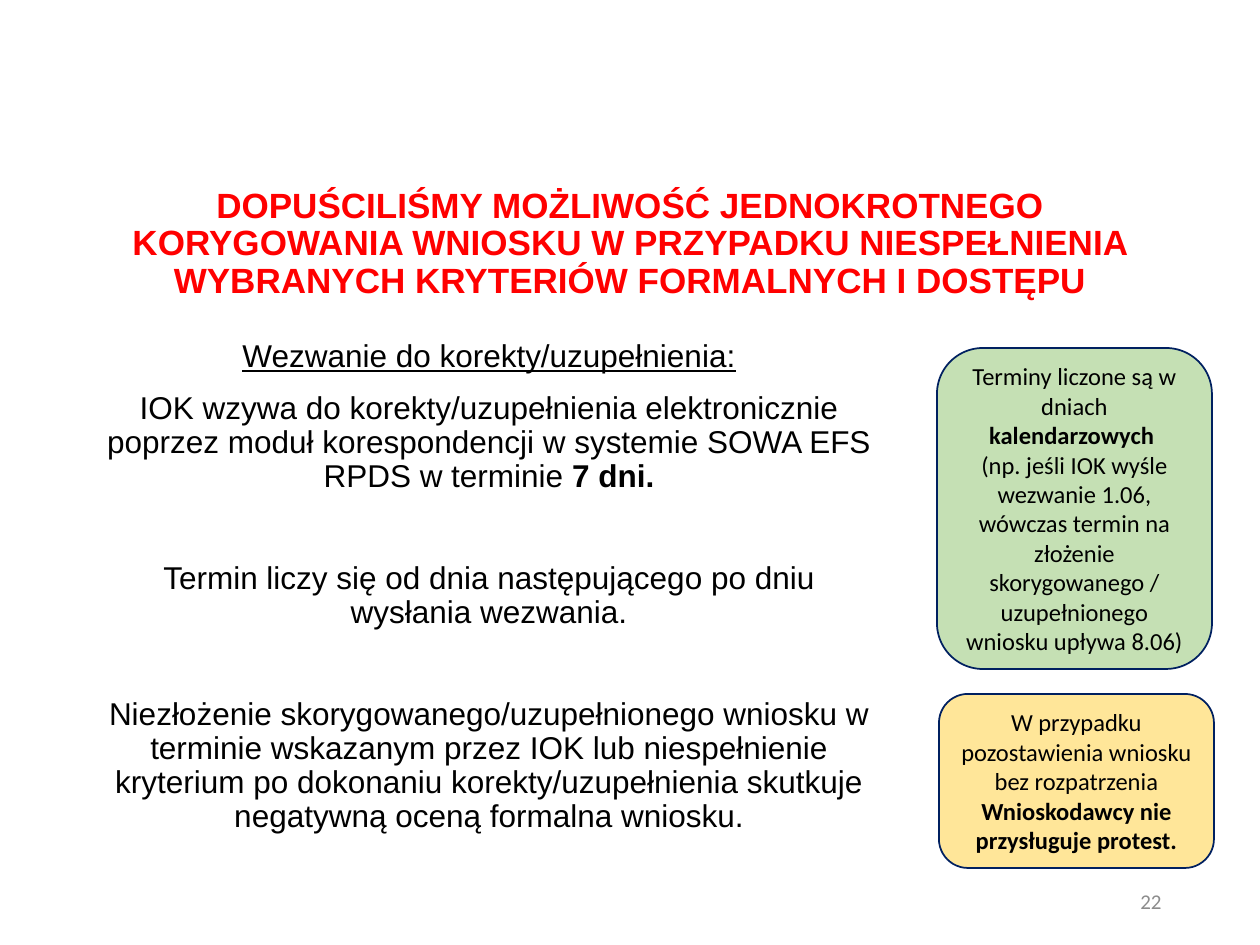
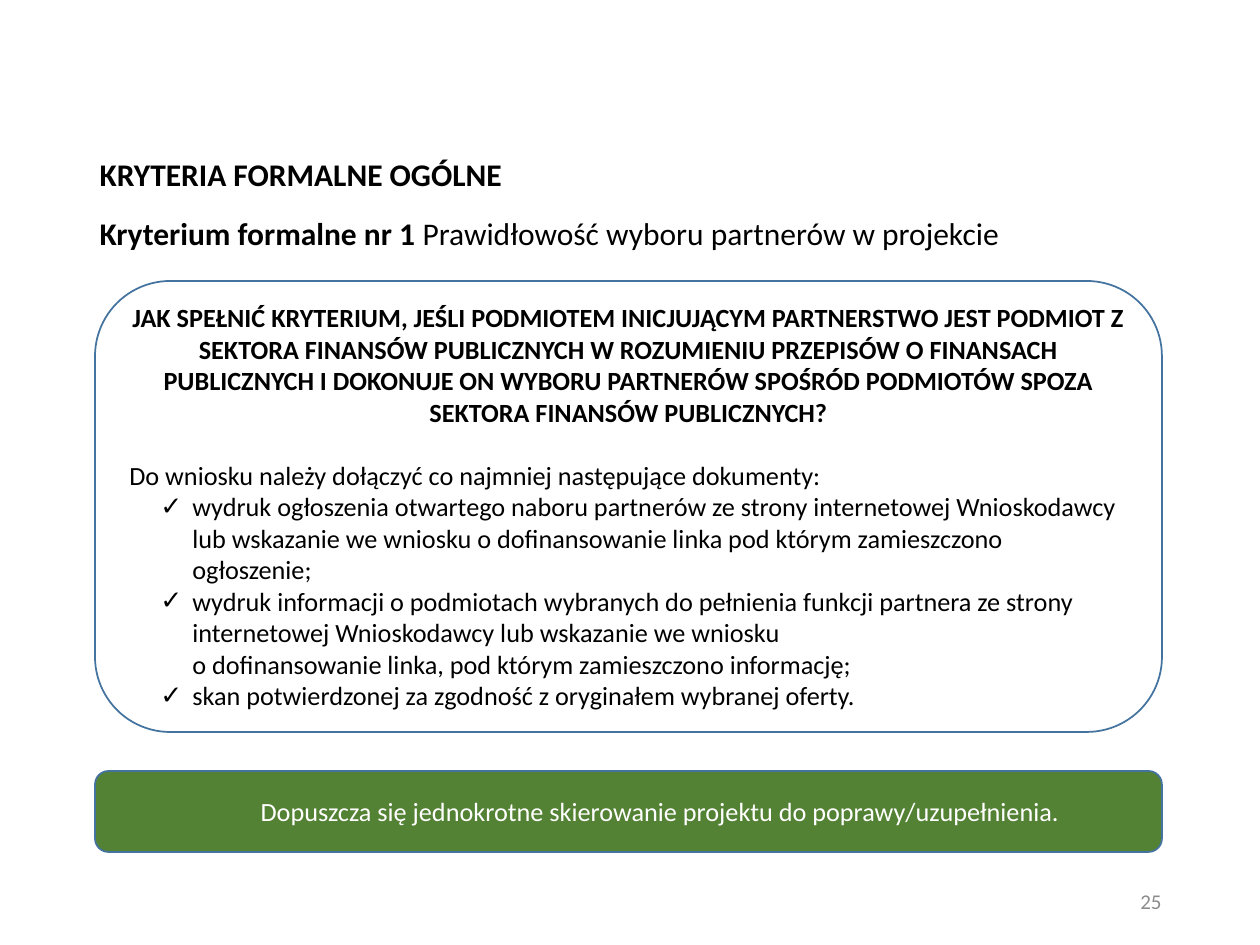
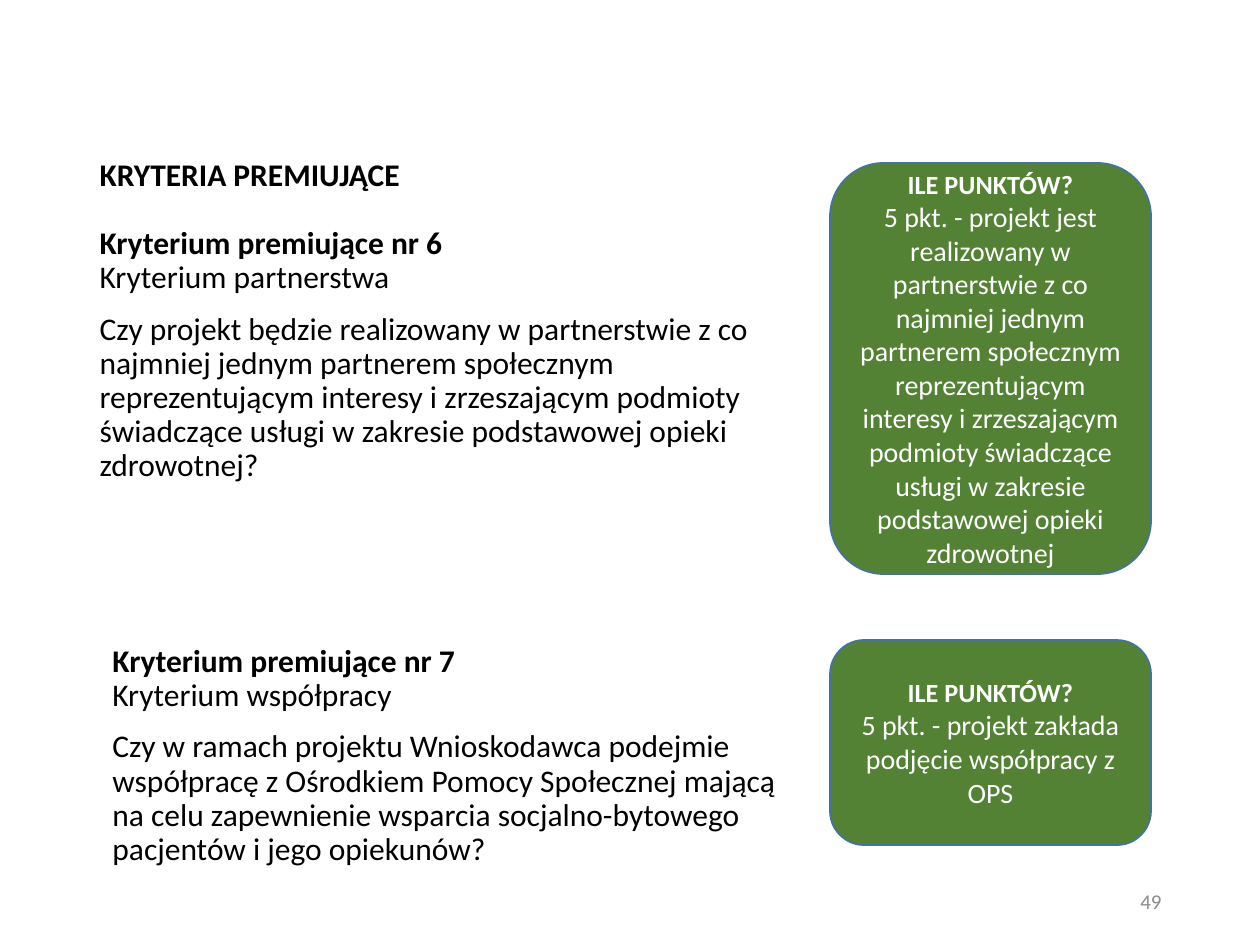
from copy import deepcopy

from lxml.etree import SubElement
from pptx import Presentation
from pptx.dml.color import RGBColor
from pptx.enum.shapes import MSO_SHAPE as Shape
from pptx.enum.text import MSO_ANCHOR as Anchor, MSO_AUTO_SIZE as AutoSize, PP_ALIGN as Align
from pptx.oxml.ns import qn
from pptx.util import Emu, Pt

EMU_PER_PX = 914400 / 126
BLACK, WHITE, RED, GREY = "000000", "FFFFFF", "FF0000", "8C8C8C"
GREEN, PALE_GREEN, YELLOW = "548235", "C5E0B4", "FFE699"
BLUE, NAVY = "43739E", "002060"
TITLE_BOX = (87, 132, 1086, 89)
NUMBER_BOX = (890, 876, 284, 50)


def px(length):
    """Turn pixels into EMU."""
    return Emu(round(length * EMU_PER_PX))


def color(hex_code):
    """Turn a hex string into a colour."""
    return RGBColor.from_string(hex_code)


def write(frame, text, size=18, font="Calibri", ink=BLACK, bold=False, underline=False,
          align=Align.LEFT, spacing=1.0, before=0, indent=0, bullet=None):
    """Add a paragraph in which ** switches bold and a newline breaks the line."""
    is_first = not frame.paragraphs[0].runs
    paragraph = frame.paragraphs[0] if is_first else frame.add_paragraph()
    properties = paragraph._p.get_or_add_pPr()
    properties.set("marL", str(px(indent)))
    properties.set("indent", str(px(-32 if bullet else 0)))
    if bullet:
        SubElement(properties, qn("a:buFont"), typeface="Arial")
        SubElement(properties, qn("a:buChar"), char=bullet)
    else:
        SubElement(properties, qn("a:buNone"))
    paragraph.alignment = align
    paragraph.line_spacing = spacing
    paragraph.space_before = Pt(0 if is_first else before)
    paragraph.space_after = Pt(0)
    for part, passage in enumerate(text.split("**")):
        for row, words in enumerate(passage.split("\n")):
            if row:
                paragraph.add_line_break()
                paragraph._p[-1].insert(0, deepcopy(run._r.rPr))
            if not words:
                continue
            run = paragraph.add_run()
            run.text = words
            run.font.size = Pt(size)
            run.font.name = font
            run.font.bold = bold or part % 2 == 1
            run.font.underline = underline
            run.font.color.rgb = color(ink)


def place(region, box, anchor=Anchor.TOP):
    """Move a text region to its box and return its text frame."""
    region.left, region.top, region.width, region.height = map(px, box)
    frame = region.text_frame
    frame.word_wrap = True
    frame.auto_size = AutoSize.NONE
    frame.vertical_anchor = anchor
    return frame


def start_slide(deck, title, number, body_box, title_box=TITLE_BOX, **title_format):
    """Add a slide with title and number; return it with its body frame."""
    slide = deck.slides.add_slide(deck.slide_layouts[1])
    write(place(slide.shapes.title, title_box, Anchor.MIDDLE), title,
          bold=True, spacing=0.9, **title_format)
    page = slide.shapes.add_textbox(0, 0, 0, 0)
    write(place(page, NUMBER_BOX, Anchor.MIDDLE), str(number),
          size=12, ink=GREY, align=Align.RIGHT)
    return slide, place(slide.placeholders[1], body_box)


def add_card(slide, box, fill, outline=BLUE):
    """Add a rounded card and return its text frame."""
    card = slide.shapes.add_shape(Shape.ROUNDED_RECTANGLE, *map(px, box))
    card.shadow.inherit = False
    card.fill.solid()
    card.fill.fore_color.rgb = color(fill)
    card.line.color.rgb = color(outline)
    card.line.width = Pt(1)
    return place(card, box, Anchor.MIDDLE)


def add_points(slide, box, award):
    """Add a green card that tells how many points a criterion gives."""
    points = add_card(slide, box, GREEN)
    write(points, "ILE PUNKTÓW?", size=15, bold=True, ink=WHITE, align=Align.CENTER)
    write(points, award, size=16, ink=WHITE, align=Align.CENTER)


def write_criterion(frame, heading, question):
    """Write a bonus criterion: its heading and its question."""
    for text in (heading, question):
        write(frame, text, spacing=0.9, before=10)


def build_correction(deck):
    """Build the slide on correcting an application."""
    slide, body = start_slide(
        deck,
        "DOPUŚCILIŚMY MOŻLIWOŚĆ JEDNOKROTNEGO KORYGOWANIA WNIOSKU W PRZYPADKU "
        "NIESPEŁNIENIA WYBRANYCH KRYTERIÓW FORMALNYCH I DOSTĘPU",
        22, (87, 334, 804, 533), (87, 180, 1086, 129),
        size=20, font="Arial", ink=RED, align=Align.CENTER)
    rules = [
        ("Wezwanie do korekty/uzupełnienia:", 0),
        ("IOK wzywa do korekty/uzupełnienia elektronicznie poprzez moduł korespondencji "
         "w systemie SOWA EFS RPDS w terminie **7 dni.**", 10),
        ("Termin liczy się od dnia następującego po dniu wysłania wezwania.", 39),
        ("Niezłożenie skorygowanego/uzupełnionego wniosku w terminie wskazanym przez IOK "
         "lub niespełnienie kryterium po dokonaniu korekty/uzupełnienia skutkuje negatywną "
         "oceną formalna wniosku.", 39),
    ]
    for order, (rule, gap) in enumerate(rules):
        write(body, rule, font="Arial", underline=order == 0, align=Align.CENTER,
              spacing=0.9, before=gap)
    deadline = add_card(slide, (937, 348, 275, 321), PALE_GREEN, NAVY)
    protest = add_card(slide, (939, 694, 275, 174), YELLOW, NAVY)
    for card, note in (
        (deadline, "Terminy liczone są w dniach **kalendarzowych **"),
        (deadline, "(np. jeśli IOK wyśle wezwanie 1.06, wówczas termin na złożenie "
                   "skorygowanego / uzupełnionego wniosku upływa 8.06)"),
        (protest, "W przypadku pozostawienia wniosku bez rozpatrzenia "
                  "**Wnioskodawcy nie przysługuje protest.**"),
    ):
        write(card, note, size=14, align=Align.CENTER)


def build_formal(deck):
    """Build the slide on the first formal criterion."""
    slide, body = start_slide(deck, "KRYTERIA FORMALNE OGÓLNE", 25, (87, 212, 1086, 88))
    write(body, "**Kryterium formalne nr 1** Prawidłowość wyboru partnerów w projekcie",
          spacing=0.9)
    answer = add_card(slide, (95, 281, 1067, 451), WHITE)
    write(answer,
          "JAK SPEŁNIĆ KRYTERIUM, JEŚLI PODMIOTEM INICJUJĄCYM PARTNERSTWO JEST PODMIOT Z "
          "SEKTORA FINANSÓW PUBLICZNYCH W ROZUMIENIU PRZEPISÓW O FINANSACH PUBLICZNYCH I "
          "DOKONUJE ON WYBORU PARTNERÓW SPOŚRÓD PODMIOTÓW SPOZA SEKTORA FINANSÓW "
          "PUBLICZNYCH?", size=15, bold=True, align=Align.CENTER)
    write(answer, "Do wniosku należy dołączyć co najmniej następujące dokumenty:",
          size=15, before=18)
    for document in (
        "wydruk ogłoszenia otwartego naboru partnerów ze strony internetowej Wnioskodawcy "
        "lub wskazanie we wniosku o dofinansowanie linka pod którym zamieszczono ogłoszenie;",
        "wydruk informacji o podmiotach wybranych do pełnienia funkcji partnera ze strony "
        "internetowej Wnioskodawcy lub wskazanie we wniosku \n"
        "o dofinansowanie linka, pod którym zamieszczono informację;",
        "skan potwierdzonej za zgodność z oryginałem wybranej oferty.",
    ):
        write(answer, document, size=15, indent=63, bullet="✓")
    write(add_card(slide, (95, 771, 1067, 81), GREEN),
          "Dopuszcza się jednokrotne skierowanie projektu do poprawy/uzupełnienia.",
          size=15, ink=WHITE, align=Align.CENTER, indent=63)


def build_bonus(deck):
    """Build the slide on bonus criteria 6 and 7."""
    slide, partnership = start_slide(deck, "KRYTERIA PREMIUJĄCE", 49, (87, 221, 711, 334))
    write_criterion(
        partnership, "**Kryterium premiujące nr 6 \n**Kryterium partnerstwa",
        "Czy projekt będzie realizowany w partnerstwie z co najmniej jednym partnerem "
        "społecznym reprezentującym interesy i zrzeszającym podmioty świadczące usługi "
        "w zakresie podstawowej opieki zdrowotnej?")
    add_points(
        slide, (830, 163, 321, 411),
        "5 pkt. - projekt jest realizowany w partnerstwie z co najmniej jednym partnerem "
        "społecznym reprezentującym interesy i zrzeszającym podmioty świadczące usługi "
        "w zakresie podstawowej opieki zdrowotnej")
    cooperation = place(slide.shapes.add_textbox(0, 0, 0, 0), (100, 639, 711, 244))
    write_criterion(
        cooperation, "**Kryterium premiujące nr 7 \n**Kryterium współpracy",
        "Czy w ramach projektu Wnioskodawca podejmie współpracę z Ośrodkiem Pomocy "
        "Społecznej mającą na celu zapewnienie wsparcia socjalno-bytowego pacjentów "
        "i jego opiekunów?")
    add_points(slide, (830, 640, 321, 205),
               "5 pkt. - projekt zakłada podjęcie współpracy z OPS")


def main():
    """Build and save the deck."""
    deck = Presentation()
    deck.slide_width, deck.slide_height = px(1260), px(945)
    for build in (build_correction, build_formal, build_bonus):
        build(deck)
    deck.save("out.pptx")


if __name__ == "__main__":
    main()
